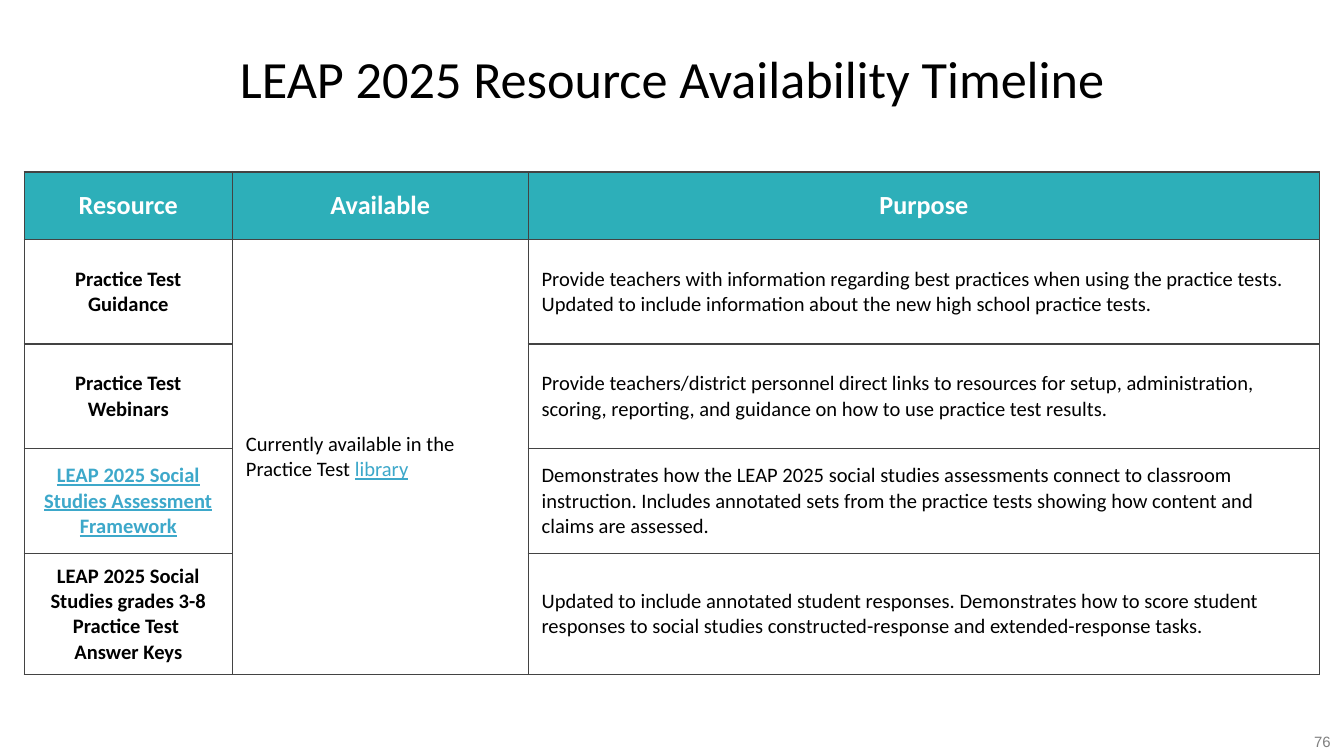
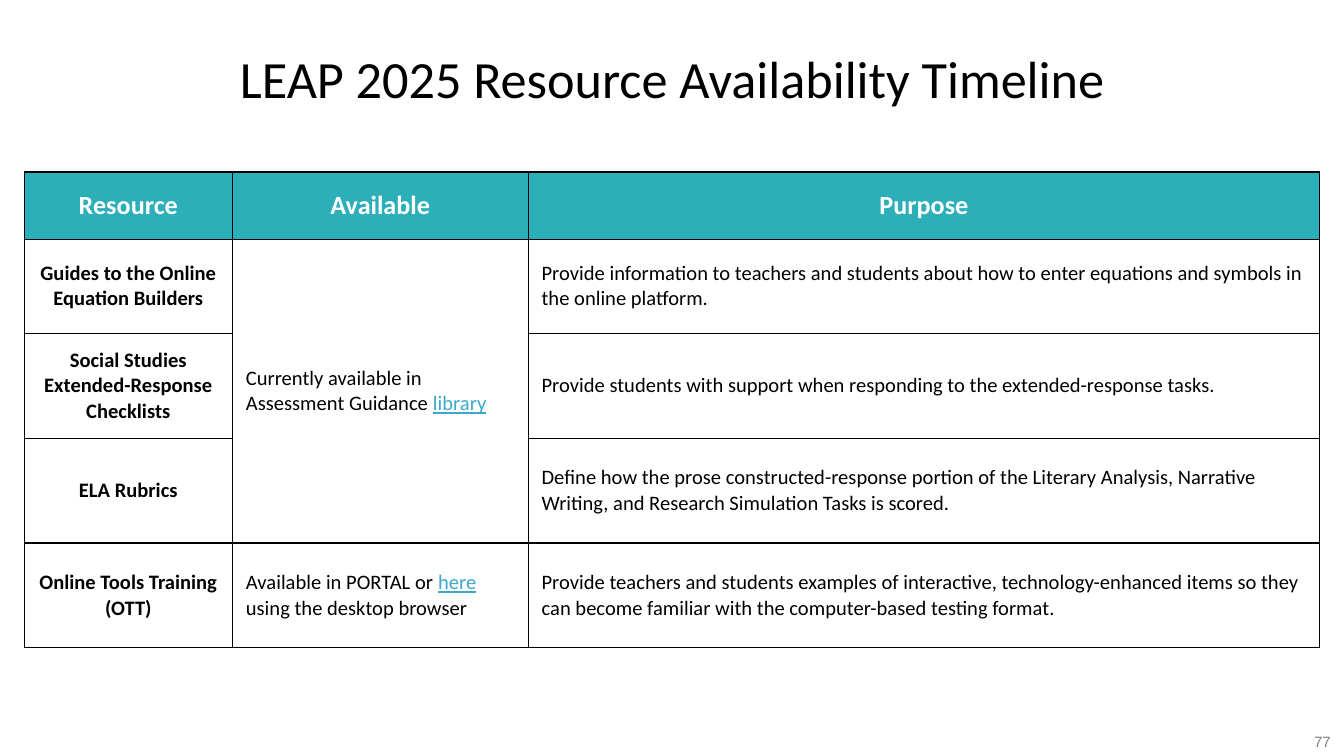
from dataclasses import dataclass

from lxml.etree import SubElement
from pptx import Presentation
from pptx.dml.color import RGBColor
from pptx.enum.text import MSO_ANCHOR, MSO_AUTO_SIZE, PP_ALIGN
from pptx.oxml.ns import qn
from pptx.util import Inches, Pt


@dataclass(frozen=True)
class Theme:
    font: str = "Calibri"
    number_font: str = "Arial"
    ink: str = "000000"
    paper: str = "FFFFFF"
    header: str = "2DAFB9"
    link: str = "3DA8CA"
    muted: str = "7F7F7F"
    soft_border: str = "434343"
    title_size: int = 28
    header_size: int = 14
    body_size: int = 11
    number_size: int = 8
    border_width: float = 0.75


THEME = Theme()
WIDTH = Inches(10)
HEIGHT = WIDTH * 9 // 16
TITLE = "LEAP 2025 Resource Availability Timeline"
HEADINGS = ["Resource", "Available", "Purpose"]
COLUMN_WIDTHS = [1.55, 2.2, 5.89]
HEADER_HEIGHT = 0.5

# Square brackets mark link text; None continues the cell above.
PRACTICE_ROWS = [
    (0.78, "Practice Test Guidance",
     "Currently available in the Practice Test [library]",
     "Provide teachers with information regarding best practices when using the "
     "practice tests. Updated to include information about the new high school "
     "practice tests."),
    (0.78, "Practice Test Webinars", None,
     "Provide teachers/district personnel direct links to resources for setup, "
     "administration, scoring, reporting, and guidance on how to use practice "
     "test results."),
    (0.78, "[LEAP 2025 Social Studies Assessment Framework]", None,
     "Demonstrates how the LEAP 2025 social studies assessments connect to "
     "classroom instruction. Includes annotated sets from the practice tests "
     "showing how content and claims are assessed."),
    (0.9, "LEAP 2025 Social Studies grades 3-8 Practice Test \nAnswer Keys", None,
     "Updated to include annotated student responses. Demonstrates how to score "
     "student responses to social studies constructed-response and "
     "extended-response tasks."),
]
GUIDANCE_ROWS = [
    (0.7, "Guides to the Online Equation Builders",
     "Currently available in Assessment Guidance [library]",
     "Provide information to teachers and students about how to enter equations "
     "and symbols in the online platform."),
    (0.78, "Social Studies Extended-Response Checklists", None,
     "Provide students with support when responding to the extended-response "
     "tasks."),
    (0.78, "ELA Rubrics", None,
     "Define how the prose constructed-response portion of the Literary "
     "Analysis, Narrative Writing, and Research Simulation Tasks is scored."),
    (0.78, "Online Tools Training (OTT)",
     "Available in PORTAL or [here ]using the desktop browser",
     "Provide teachers and students examples of interactive, "
     "technology-enhanced items so they can become familiar with the "
     "computer-based testing format."),
]


def set_font(font, size, color, name=THEME.font, bold=False):
    font.name, font.size, font.bold = name, Pt(size), bold
    font.color.rgb = RGBColor.from_string(color)


# Slide title and number
def add_title(slide):
    title = slide.shapes.title
    title.left, title.top = int(WIDTH * 0.05), Inches(0.23)
    title.width, title.height = int(WIDTH * 0.9), Inches(0.94)
    frame = title.text_frame
    frame.auto_size = MSO_AUTO_SIZE.NONE
    frame.word_wrap = True
    frame.vertical_anchor = MSO_ANCHOR.MIDDLE
    frame.margin_left = frame.margin_right = frame.margin_top = Inches(0.1)
    frame.margin_bottom = Inches(0.34)
    frame.text = TITLE
    paragraph = frame.paragraphs[0]
    paragraph.alignment = PP_ALIGN.CENTER
    set_font(paragraph.font, THEME.title_size, THEME.ink)


def add_number(slide, number):
    width, height = Inches(2.33), Inches(0.28)
    box = slide.shapes.add_textbox(WIDTH - width, Inches(5.38), width, height)
    frame = box.text_frame
    frame.word_wrap = True
    frame.vertical_anchor = MSO_ANCHOR.MIDDLE
    frame.text = str(number)
    paragraph = frame.paragraphs[0]
    paragraph.alignment = PP_ALIGN.RIGHT
    set_font(paragraph.font, THEME.number_size, THEME.muted, THEME.number_font)


# Table cells
def add_borders(cell, color):
    properties = cell._tc.get_or_add_tcPr()
    for side in ("lnL", "lnR", "lnT", "lnB"):
        line = SubElement(properties, qn(f"a:{side}"),
                          w=str(Pt(THEME.border_width)))
        fill = SubElement(line, qn("a:solidFill"))
        SubElement(fill, qn("a:srgbClr"), val=color)


def style_cell(cell, fill, border):
    add_borders(cell, border)
    cell.fill.solid()
    cell.fill.fore_color.rgb = RGBColor.from_string(fill)
    cell.vertical_anchor = MSO_ANCHOR.MIDDLE
    cell.margin_left = cell.margin_right = Inches(0.1)
    cell.margin_top = cell.margin_bottom = Inches(0.07)


def write_cell(cell, text, size, color, centred):
    frame = cell.text_frame
    for index, line in enumerate(text.split("\n")):
        paragraph = frame.add_paragraph() if index else frame.paragraphs[0]
        paragraph.alignment = PP_ALIGN.CENTER if centred else PP_ALIGN.LEFT
        set_font(paragraph.font, size, color, bold=centred)
        for part, words in enumerate(line.replace("]", "[").split("[")):
            if not words:
                continue
            run = paragraph.add_run()
            run.text = words
            if part % 2:
                run.font.underline = True
                run.font.color.rgb = RGBColor.from_string(THEME.link)


def add_resource_table(slide, rows, border):
    heights = [HEADER_HEIGHT] + [row[0] for row in rows]
    table = slide.shapes.add_table(
        len(heights), len(HEADINGS), Inches(0.18), Inches(1.28),
        Inches(sum(COLUMN_WIDTHS)), Inches(sum(heights))).table
    table.horz_banding = False
    for column, width in zip(table.columns, COLUMN_WIDTHS):
        column.width = Inches(width)
    for row, height in zip(table.rows, heights):
        row.height = Inches(height)

    for column, heading in enumerate(HEADINGS):
        cell = table.cell(0, column)
        style_cell(cell, THEME.header, border)
        write_cell(cell, heading, THEME.header_size, THEME.paper, True)
    for row, (_, *texts) in enumerate(rows, 1):
        for column, text in enumerate(texts):
            cell = table.cell(row, column)
            style_cell(cell, THEME.paper, border)
            if text is not None:
                write_cell(cell, text, THEME.body_size, THEME.ink, column == 0)

    # Join each availability cell with the empty ones below it
    starts = [row for row, entry in enumerate(rows, 1) if entry[2] is not None]
    for start, following in zip(starts, starts[1:] + [len(heights)]):
        if following - start > 1:
            table.cell(start, 1).merge(table.cell(following - 1, 1))


def add_timeline_slide(presentation, number, rows, border):
    slide = presentation.slides.add_slide(presentation.slide_layouts[5])
    add_resource_table(slide, rows, border)
    add_number(slide, number)
    add_title(slide)


def main():
    presentation = Presentation()
    presentation.slide_width, presentation.slide_height = WIDTH, HEIGHT
    add_timeline_slide(presentation, 76, PRACTICE_ROWS, THEME.soft_border)
    add_timeline_slide(presentation, 77, GUIDANCE_ROWS, THEME.ink)
    presentation.save("out.pptx")


if __name__ == "__main__":
    main()
